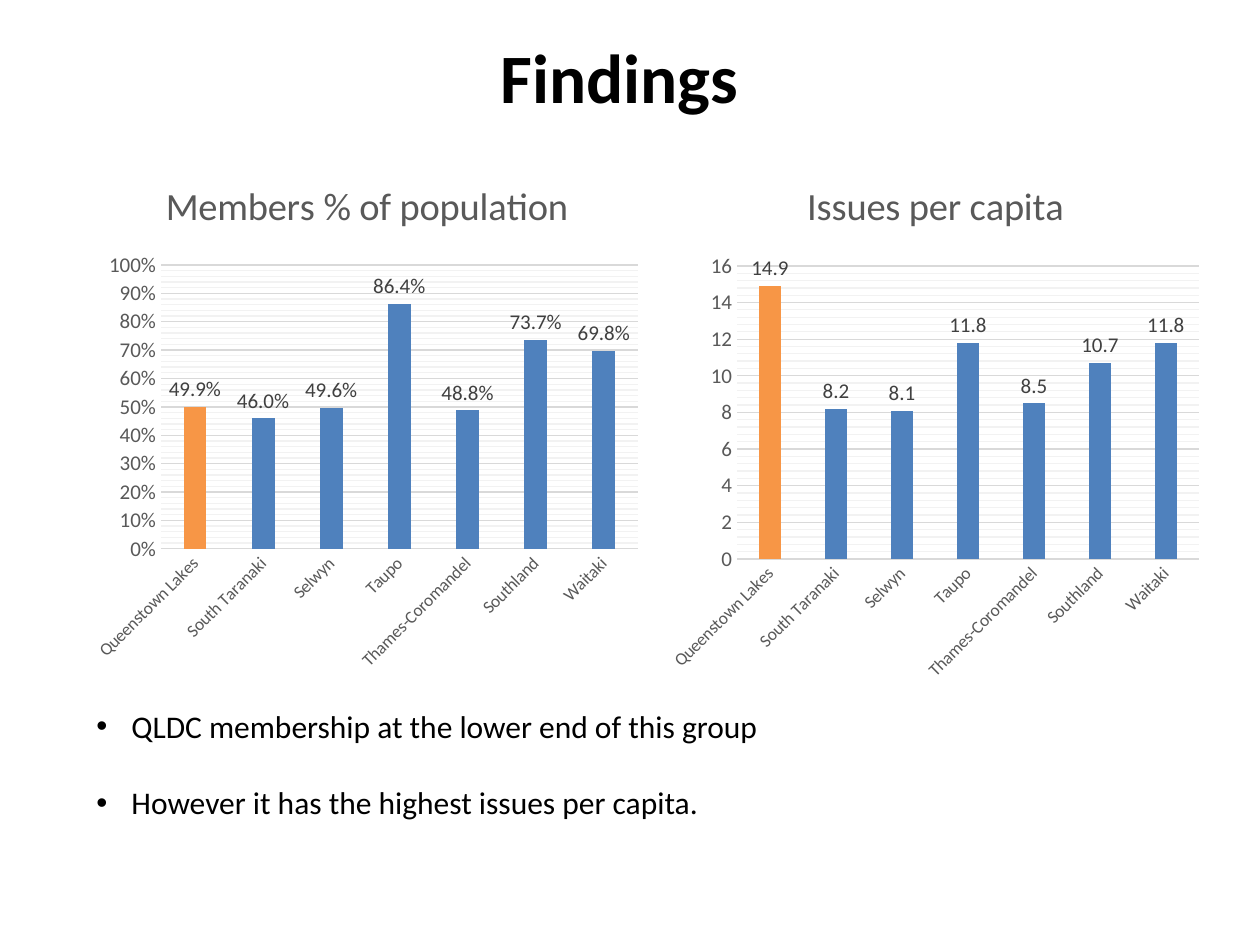
from dataclasses import dataclass

from lxml import etree
from pptx import Presentation
from pptx.chart.data import CategoryChartData
from pptx.dml.color import RGBColor
from pptx.enum.chart import XL_CHART_TYPE, XL_LABEL_POSITION, XL_TICK_MARK
from pptx.enum.text import MSO_ANCHOR, MSO_AUTO_SIZE, PP_ALIGN
from pptx.oxml.ns import qn
from pptx.util import Pt

PX = 914400 / 126  # EMU in one px


@dataclass(frozen=True)
class Theme:
    font: str = "Calibri"
    ink: str = "000000"
    caption: str = "595959"
    value: str = "404040"
    bar: str = "4F81BD"
    highlight: str = "F79646"
    major: str = "D9D9D9"
    minor: str = "F2F2F2"
    rule_width: float = 0.75
    heading_size: float = 39.6
    caption_size: int = 22
    body_size: int = 18
    value_size: int = 12
    district_size: int = 10


THEME = Theme()
DISTRICTS = ["Queenstown Lakes", "South Taranaki", "Selwyn", "Taupo",
             "Thames-Coromandel", "Southland", "Waitaki"]

# box: left, top, width, height; insets: left, top, right, bottom of the plot
MEASURES = [
    dict(name="Members % of population", box=(84, 155, 566, 525), insets=(77, 110, 12, 131),
         shares=[0.499, 0.46, 0.496, 0.864, 0.488, 0.737, 0.698],
         top=1, step=0.1, axis_format="0%", label_format="0.0%"),
    dict(name="Issues per capita", box=(660, 155, 551, 536), insets=(77, 111, 12, 132),
         shares=[14.9, 8.2, 8.1, 11.8, 8.5, 10.7, 11.8],
         top=16, step=2, axis_format="0", label_format="0.0"),
]
REMARKS = ["QLDC membership at the lower end of this group",
           "However it has the highest issues per capita."]


def emu(*lengths):
    return [round(length * PX) for length in lengths]


def assign(target, **values):
    for key, value in values.items():
        setattr(target, key, value)


def style(font, size, color, bold=False):
    assign(font, name=THEME.font, size=Pt(size), bold=bold)
    font.color.rgb = RGBColor.from_string(color)


def rule(line, color):
    line.width = Pt(THEME.rule_width)
    line.color.rgb = RGBColor.from_string(color)


def rule_minor_gridlines(axis, color):
    """Colour the minor gridlines, which have no public format object."""
    gridlines = axis._element.find(qn("c:minorGridlines"))
    line = etree.SubElement(etree.SubElement(gridlines, qn("c:spPr")), qn("a:ln"))
    line.set("w", str(Pt(THEME.rule_width)))
    fill = etree.SubElement(line, qn("a:solidFill"))
    etree.SubElement(fill, qn("a:srgbClr")).set("val", color)


def add_heading(slide, box, text):
    heading = slide.shapes.title
    assign(heading, **dict(zip(("left", "top", "width", "height"), emu(*box))))
    frame = heading.text_frame
    assign(frame, text=text, vertical_anchor=MSO_ANCHOR.MIDDLE,
           auto_size=MSO_AUTO_SIZE.NONE, word_wrap=True)
    frame.paragraphs[0].alignment = PP_ALIGN.CENTER
    style(frame.paragraphs[0].runs[0].font, THEME.heading_size, THEME.ink, bold=True)


def place_plot(chart, box, insets):
    """Fix the inner plot area at the given insets from the chart's edges."""
    width, height = box[2:]
    left, top, right, bottom = insets
    plot_area = chart._chartSpace.find(".//" + qn("c:plotArea"))
    for old in plot_area.findall(qn("c:layout")):
        plot_area.remove(old)
    layout = etree.Element(qn("c:layout"))
    manual = etree.SubElement(layout, qn("c:manualLayout"))
    for tag, value in dict(layoutTarget="inner", xMode="edge", yMode="edge",
                           x=left / width, y=top / height,
                           w=(width - left - right) / width,
                           h=(height - top - bottom) / height).items():
        etree.SubElement(manual, qn("c:" + tag)).set("val", str(value))
    plot_area.insert(0, layout)


def add_measure(slide, box, insets, name, shares, top, step, axis_format, label_format):
    chart_data = CategoryChartData(number_format=label_format)
    chart_data.categories = DISTRICTS
    chart_data.add_series(name, shares)
    chart = slide.shapes.add_chart(
        XL_CHART_TYPE.COLUMN_CLUSTERED, *emu(*box), chart_data).chart
    chart.has_legend = False
    style(chart.font, THEME.district_size, THEME.ink)
    place_plot(chart, box, insets)

    # Caption
    chart.has_title = True
    caption = chart.chart_title
    caption.include_in_layout = False
    caption.text_frame.text = name
    style(caption.text_frame.paragraphs[0].runs[0].font, THEME.caption_size, THEME.caption)

    # Axes and gridlines
    districts, scale = chart.category_axis, chart.value_axis
    for axis, size in ((districts, THEME.district_size), (scale, THEME.value_size)):
        assign(axis, major_tick_mark=XL_TICK_MARK.NONE, minor_tick_mark=XL_TICK_MARK.NONE)
        style(axis.tick_labels.font, size, THEME.caption)
    rule(districts.format.line, THEME.major)
    slant = districts._element.find(qn("c:txPr")).find(qn("a:bodyPr"))
    slant.set("rot", "-2700000")
    slant.set("vert", "horz")
    assign(scale, minimum_scale=0, maximum_scale=top, major_unit=step, minor_unit=step / 5,
           has_major_gridlines=True, has_minor_gridlines=True)
    scale.format.line.fill.background()
    rule(scale.major_gridlines.format.line, THEME.major)
    rule_minor_gridlines(scale, THEME.minor)
    assign(scale.tick_labels, number_format=axis_format, number_format_is_linked=False)

    # Bars, with the first district highlighted
    plot = chart.plots[0]
    assign(plot, gap_width=199, vary_by_categories=False)
    bars = plot.series[0]
    bars.invert_if_negative = False
    for part, color in ((bars, THEME.bar), (bars.points[0], THEME.highlight)):
        part.format.fill.solid()
        part.format.fill.fore_color.rgb = RGBColor.from_string(color)
    labels = bars.data_labels
    assign(labels, show_value=True, number_format=label_format,
           number_format_is_linked=False, position=XL_LABEL_POSITION.OUTSIDE_END)
    style(labels.font, THEME.value_size, THEME.value)


def add_remarks(slide, box, remarks):
    frame = slide.shapes.add_textbox(*emu(*box)).text_frame
    frame.word_wrap = True
    hang, = emu(35)
    for index, remark in enumerate(remarks):
        paragraph = frame.add_paragraph() if index else frame.paragraphs[0]
        if index:
            paragraph.space_before = Pt(22)
        run = paragraph.add_run()
        run.text = remark
        style(run.font, THEME.body_size, THEME.ink)
        # Hanging bullet
        properties = paragraph._p.get_or_add_pPr()
        properties.set("marL", str(hang))
        properties.set("indent", str(-hang))
        etree.SubElement(properties, qn("a:buFont")).set("typeface", "Arial")
        etree.SubElement(properties, qn("a:buChar")).set("char", "•")


def main():
    deck = Presentation()
    deck.slide_width, deck.slide_height = emu(1260, 945)
    slide = deck.slides.add_slide(deck.slide_layouts[5])
    add_heading(slide, (84, 26, 1071, 100), "Findings")
    for measure in MEASURES:
        add_measure(slide, **measure)
    add_remarks(slide, (84, 701, 1091, 127), REMARKS)
    deck.save("out.pptx")


if __name__ == "__main__":
    main()
